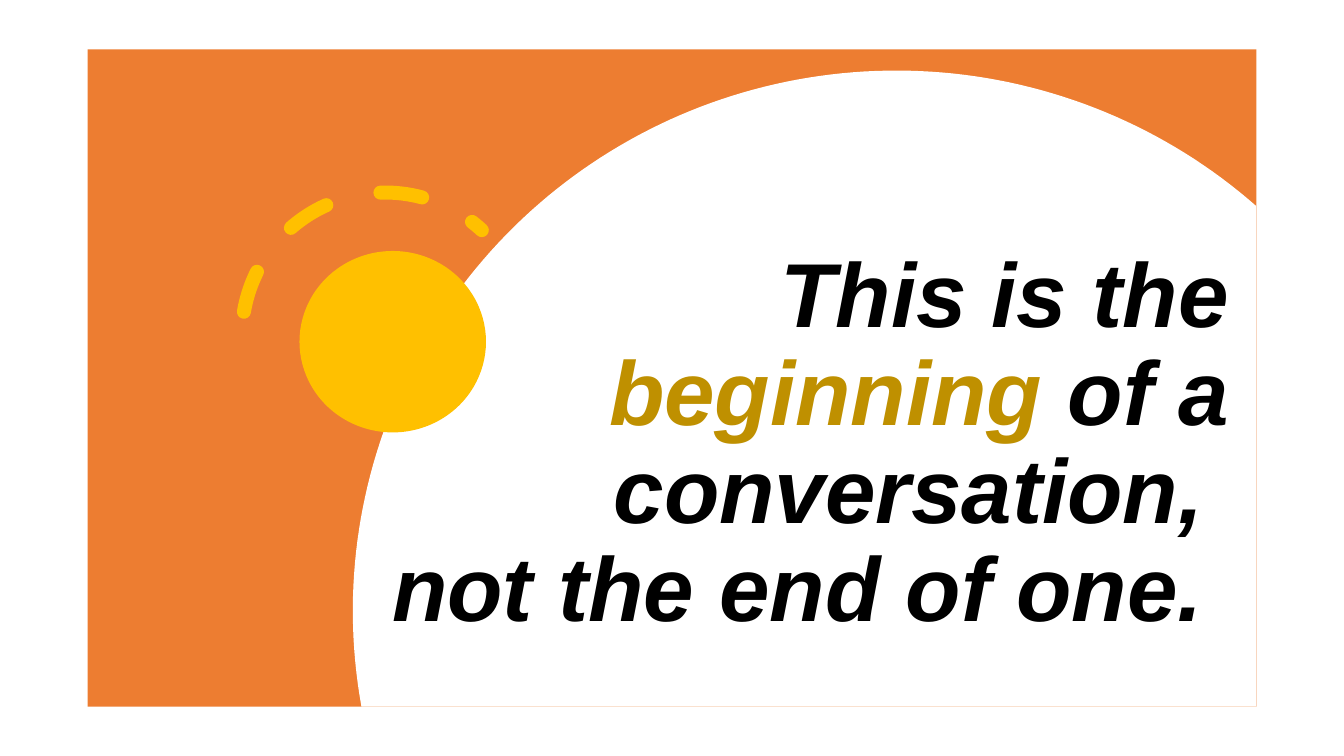
from math import asin, acos, cos, pi, sin

from pptx import Presentation
from pptx.dml.color import RGBColor
from pptx.enum.dml import MSO_LINE
from pptx.enum.shapes import MSO_SHAPE
from pptx.enum.text import MSO_ANCHOR, MSO_AUTO_SIZE, PP_ALIGN
from pptx.util import Inches, Pt

RECTANGLE, OVAL, ARC = MSO_SHAPE.RECTANGLE, MSO_SHAPE.OVAL, MSO_SHAPE.ARC
DASH = MSO_LINE.DASH
BOTTOM, RIGHT, NO_FIT = MSO_ANCHOR.BOTTOM, PP_ALIGN.RIGHT, MSO_AUTO_SIZE.NONE

ORANGE = RGBColor(0xED, 0x7D, 0x31)
WHITE = RGBColor(0xFF, 0xFF, 0xFF)
YELLOW = RGBColor(0xFF, 0xC0, 0x00)
GOLD = RGBColor(0xBF, 0x90, 0x00)
BLACK = RGBColor(0x00, 0x00, 0x00)

PANEL = (0.87, 0.49, 11.59, 6.52)
PANEL_RIGHT, PANEL_BOTTOM = 12.46, 7.01
HILL_CENTRE = (8.89, 6.06)
HILL_RADII = (5.39, 5.36)
HILL_STEPS = 120


def paint(shape, color):
    shape.shadow.inherit = False
    shape.fill.solid()
    shape.fill.fore_color.rgb = color
    shape.line.fill.background()


def add_filled_shape(slide, kind, box, color):
    shape = slide.shapes.add_shape(kind, *map(Inches, box))
    paint(shape, color)


def add_hill(slide):
    """Draw the white ellipse, cut off at the panel's right and bottom edges."""
    (center_x, center_y), (radius_x, radius_y) = HILL_CENTRE, HILL_RADII
    start = acos((PANEL_RIGHT - center_x) / radius_x)
    end = pi + asin((PANEL_BOTTOM - center_y) / radius_y)
    angles = [start + (end - start) * step / HILL_STEPS for step in range(HILL_STEPS + 1)]
    points = [(Inches(center_x + radius_x * cos(angle)),
               Inches(center_y - radius_y * sin(angle))) for angle in angles]
    corner = (Inches(PANEL_RIGHT), Inches(PANEL_BOTTOM))
    builder = slide.shapes.build_freeform(*corner)
    builder.add_line_segments(points, close=True)
    paint(builder.convert_to_shape(), WHITE)


def add_sun_rays(slide):
    rays = slide.shapes.add_shape(ARC, *map(Inches, (2.4, 1.91, 2.84, 2.84)))
    rays.shadow.inherit = False
    rays.rotation = 308.7
    rays.adjustments[0] = 144.56
    rays.adjustments[1] = 2.28
    rays.fill.background()
    rays.line.color.rgb = YELLOW
    rays.line.width = Pt(10)
    rays.line.dash_style = DASH
    rays.line._get_or_add_ln().set("cap", "rnd")


def add_span(para, text, color):
    span = para.add_run()
    span.text = text
    font = span.font
    font.name, font.size = "Arial", Pt(64.8)
    font.bold = font.italic = True
    font.color.rgb = color


def write_title(slide):
    title = slide.shapes.title
    title.left, title.top, title.width, title.height = map(Inches, (3.68, 1.09, 8.61, 5.32))
    title.element.getparent().append(title.element)  # bring to front
    frame = title.text_frame
    frame.word_wrap = True
    frame.auto_size = NO_FIT
    frame.vertical_anchor = BOTTOM
    para = frame.paragraphs[0]
    para.alignment = RIGHT
    para.line_spacing = 0.9
    add_span(para, "This is the ", BLACK)
    add_span(para, "beginning", GOLD)
    add_span(para, " of a conversation, ", BLACK)
    para.add_line_break()
    add_span(para, "not the end of one. ", BLACK)


def main():
    deck = Presentation()
    deck.slide_width, deck.slide_height = Inches(13.33), Inches(7.5)
    slide = deck.slides.add_slide(deck.slide_layouts.get_by_name("Title Only"))
    add_filled_shape(slide, RECTANGLE, PANEL, ORANGE)
    add_hill(slide)
    add_filled_shape(slide, OVAL, (2.97, 2.49, 1.85, 1.8), YELLOW)
    add_sun_rays(slide)
    write_title(slide)
    deck.save("out.pptx")


if __name__ == "__main__":
    main()
